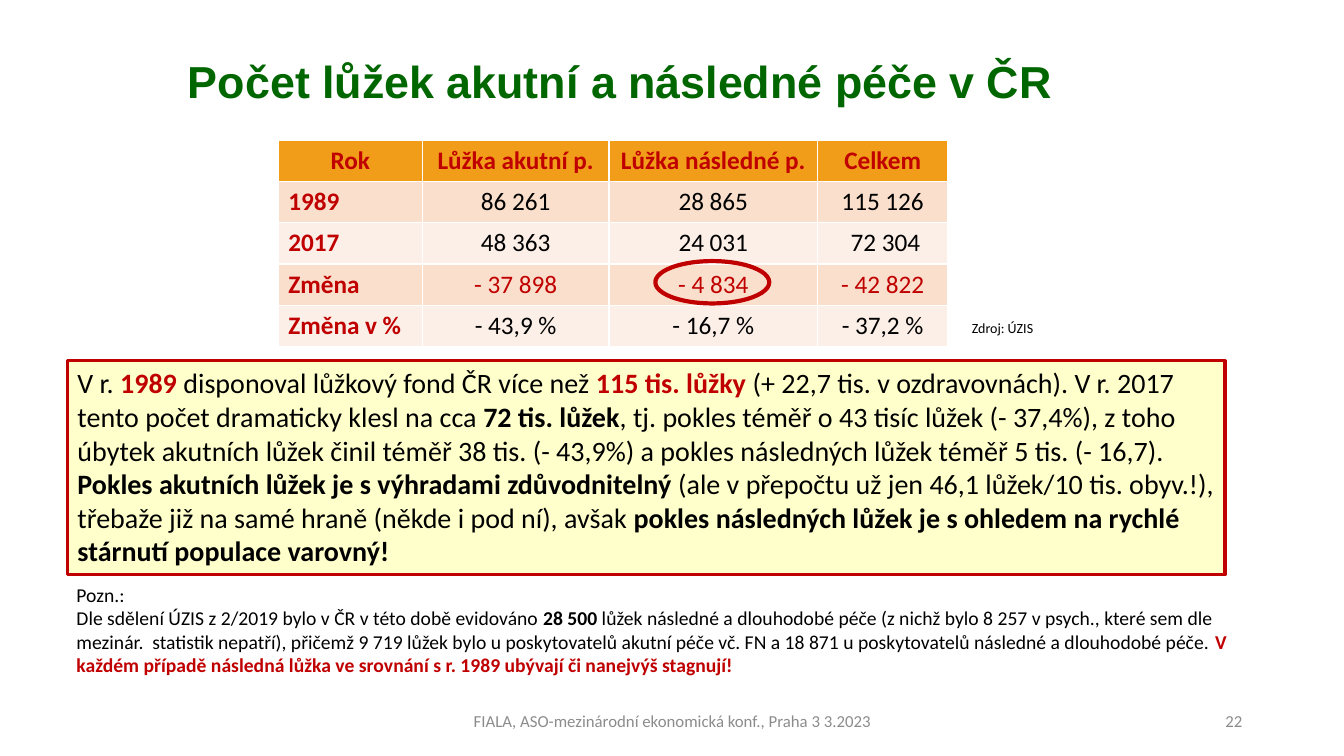
from pptx import Presentation
from pptx.dml.color import RGBColor
from pptx.enum.shapes import MSO_SHAPE as Shape
from pptx.enum.text import MSO_ANCHOR as Anchor, PP_ALIGN as Align
from pptx.util import Inches, Pt

COLORS = {
    "black": "000000", "red": "C00000", "green": "006600", "gray": "8C8C8C",
    "yellow": "FFFFCC", "orange": "F19D19", "peach": "FADFCC", "cream": "FCEFE8",
}

WIDTHS = [1.43, 1.85, 2.07, 1.29]
BEDS = [
    ["Rok", "Lůžka akutní p.", "Lůžka následné p.", "Celkem"],
    ["1989", "86 261", "28 865", "115 126"],
    ["2017", "48 363", "24 031", " 72 304"],
    ["Změna", "- 37 898", "- 4 834", "- 42 822"],
    ["Změna v %", "- 43,9 %", "- 16,7 %", "- 37,2 %"],
]

# Each run is (text, colour, bold).
SUMMARY = [[
    ("V r. ", "black", False),
    ("1989", "red", True),
    (" disponoval lůžkový fond ČR více než ", "black", False),
    ("115 tis. lůžky", "red", True),
    (" (+ 22,7 tis. v ozdravovnách). V r. 2017 tento počet dramaticky klesl "
     "na cca ", "black", False),
    ("72 tis. lůžek", "black", True),
    (", tj. pokles téměř o 43 tisíc lůžek (- 37,4%), z toho úbytek akutních "
     "lůžek činil téměř 38 tis. (- 43,9%) a pokles následných lůžek téměř "
     "5 tis. (- 16,7). ", "black", False),
    ("Pokles akutních lůžek je s výhradami zdůvodnitelný ", "black", True),
    ("(ale v přepočtu už jen 46,1 lůžek/10 tis. obyv.!), třebaže již na samé "
     "hraně (někde i pod ní), avšak ", "black", False),
    ("pokles následných lůžek je s ohledem na rychlé stárnutí populace "
     "varovný!", "black", True),
]]
NOTE = [
    [("Pozn.:", "black", False)],
    [
        ("Dle sdělení ÚZIS z 2/2019 bylo v ČR v této době evidováno ", "black", False),
        ("28 500", "black", True),
        (" lůžek následné a dlouhodobé péče (z nichž bylo 8 257 v psych., které "
         "sem dle mezinár.  statistik nepatří), přičemž 9 719 lůžek bylo u "
         "poskytovatelů akutní péče vč. FN a 18 871 u poskytovatelů následné a "
         "dlouhodobé péče. ", "black", False),
        ("V každém případě následná lůžka ve srovnání s r. 1989 ubývají či "
         "nanejvýš stagnují!", "red", True),
    ],
]


def color(name):
    return RGBColor.from_string(COLORS[name])


def style(run, size, tint, bold=False, face="Calibri"):
    font = run.font
    font.name, font.size, font.bold = face, Pt(size), bold
    font.color.rgb = color(tint)


def write(frame, paras, size, align=Align.LEFT, face="Calibri"):
    """Fill a text frame with paragraphs, each a list of runs."""
    frame.word_wrap = True
    for i, runs in enumerate(paras):
        para = frame.paragraphs[0] if i == 0 else frame.add_paragraph()
        para.alignment = align
        for text, tint, bold in runs:
            run = para.add_run()
            run.text = text
            style(run, size, tint, bold, face)


def add_text(slide, box, paras, size, align=Align.LEFT, anchor=Anchor.TOP,
             face="Calibri"):
    frame = slide.shapes.add_textbox(*map(Inches, box)).text_frame
    frame.vertical_anchor = anchor
    write(frame, paras, size, align, face)
    return frame


def add_outline(slide, kind, box, width, fill=None):
    """Add a red-lined shape, hollow unless a fill is given."""
    shape = slide.shapes.add_shape(kind, *map(Inches, box))
    shape.shadow.inherit = False
    shape.line.color.rgb = color("red")
    shape.line.width = Pt(width)
    if fill:
        shape.fill.solid()
        shape.fill.fore_color.rgb = color(fill)
    else:
        shape.fill.background()
    return shape


def add_beds(slide):
    box = (2.76, 1.39, sum(WIDTHS), 0.41 * len(BEDS))
    table = slide.shapes.add_table(
        len(BEDS), len(WIDTHS), *map(Inches, box)).table
    for col, width in zip(table.columns, WIDTHS):
        col.width = Inches(width)
    for r, row in enumerate(BEDS):
        fill = "orange" if r == 0 else "peach" if r % 2 else "cream"
        for c, text in enumerate(row):
            cell = table.cell(r, c)
            cell.fill.solid()
            cell.fill.fore_color.rgb = color(fill)
            head = r == 0 or c == 0
            tint = "red" if head or row[0] == "Změna" else "black"
            cell.text_frame.text = text
            para = cell.text_frame.paragraphs[0]
            para.alignment = Align.LEFT if c == 0 and r else Align.CENTER
            style(para.runs[0], 18, tint, head)


def main():
    deck = Presentation()
    deck.slide_width, deck.slide_height = Inches(13.33), Inches(7.5)
    slide = deck.slides.add_slide(deck.slide_layouts[6])

    title = [[("Počet lůžek akutní a následné péče v ČR", "green", True)]]
    frame = add_text(slide, (0.92, 0.4, 10.47, 0.86), title, 32,
                     Align.CENTER, Anchor.MIDDLE, "Arial")
    frame.paragraphs[0].line_spacing = 0.9

    add_beds(slide)
    source = [[("Zdroj: ÚZIS", "black", False)]]
    frame = add_text(slide, (9.54, 3.12, 0.82, 0.27), source, 10)
    frame.word_wrap = False

    panel = add_outline(slide, Shape.RECTANGLE, (0.67, 3.58, 11.48, 2.12),
                        2.25, "yellow")
    panel.text_frame.vertical_anchor = Anchor.TOP
    write(panel.text_frame, SUMMARY, 20)
    add_text(slide, (0.66, 5.73, 11.75, 1.04), NOTE, 14)
    add_outline(slide, Shape.OVAL, (6.5, 2.59, 1.13, 0.42), 3)

    footer = "FIALA, ASO-mezinárodní ekonomická konf., Praha 3 3.2023"
    for text, left, width, align in [(footer, 4.42, 4.5, Align.CENTER),
                                     ("22", 9.42, 3, Align.RIGHT)]:
        add_text(slide, (left, 6.95, width, 0.4), [[(text, "gray", False)]],
                 12, align, Anchor.MIDDLE)

    deck.save("out.pptx")


if __name__ == "__main__":
    main()
